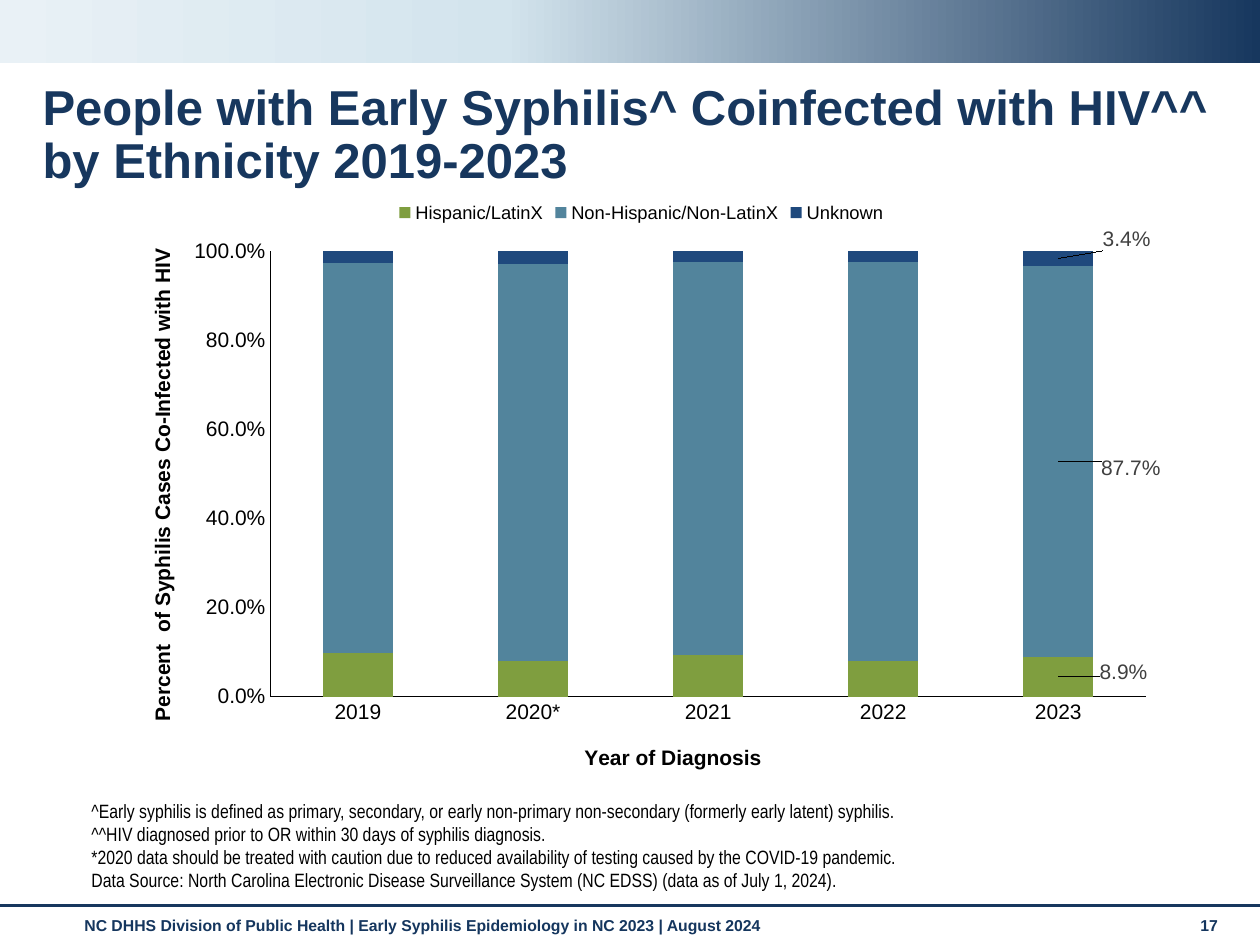
import copy

import pptx
import pptx.chart.data
import pptx.dml.color
import pptx.enum.chart
import pptx.enum.shapes
import pptx.enum.text
import pptx.oxml
import pptx.oxml.ns
import pptx.util

RGB = pptx.dml.color.RGBColor
NAVY = RGB(0x17, 0x37, 0x5E)
FOOTER_NAVY = RGB(0x15, 0x36, 0x5E)
PALE_BLUE = RGB(0xD3, 0xE4, 0xED)
ICE = RGB(0xE9, 0xF1, 0xF6)
BLACK = RGB(0, 0, 0)
LABEL_GRAY = RGB(0x40, 0x40, 0x40)
GREEN = RGB(0x7F, 0x9E, 0x3F)
TEAL = RGB(0x52, 0x84, 0x9C)
BLUE = RGB(0x1F, 0x49, 0x7D)

PX_PER_INCH = 126
WIDTH, HEIGHT = 1260, 945

YEARS = ["2019", "2020*", "2021", "2022", "2023"]
# name, values, colour, offset of the 2023 label from the middle of its bar
SERIES = [
    ("Hispanic/LatinX", [0.097, 0.08, 0.094, 0.08, 0.089], GREEN, (65, -4)),
    ("Non-Hispanic/Non-LatinX", [0.876, 0.89, 0.882, 0.895, 0.877], TEAL, (72, 7)),
    ("Unknown", [0.027, 0.03, 0.024, 0.025, 0.034], BLUE, (68, -19)),
]
FOOTNOTES = [
    "^Early syphilis is defined as primary, secondary, or early non-primary "
    "non-secondary (formerly early latent) syphilis.",
    "^^HIV diagnosed prior to OR within 30 days of syphilis diagnosis.",
    "*2020 data should be treated with caution due to reduced availability of "
    "testing caused by the COVID-19 pandemic.",
    "Data Source: North Carolina Electronic Disease Surveillance System (NC EDSS) "
    "(data as of July 1, 2024).",
]


def px(n):
    return pptx.util.Emu(round(n * 914400 / PX_PER_INCH))


def set_font(font, size, color, bold=False, name="Arial"):
    font.size = pptx.util.Pt(size)
    font.color.rgb = color
    font.bold = bold
    font.name = name


def add_text(slide, box, lines, size, color, bold=False, name="Arial"):
    tf = slide.shapes.add_textbox(*map(px, box)).text_frame
    tf.word_wrap = True
    for i, line in enumerate(lines):
        p = tf.paragraphs[0] if i == 0 else tf.add_paragraph()
        r = p.add_run()
        r.text = line
        set_font(r.font, size, color, bold, name)
    return tf


def add_banner(slide, box):
    sp = slide.shapes.add_shape(pptx.enum.shapes.MSO_SHAPE.RECTANGLE, *map(px, box))
    sp.shadow.inherit = False
    sp.line.fill.background()
    sp.fill.gradient()
    sp.fill.gradient_angle = 180
    stops = sp._element.spPr.find(".//" + pptx.oxml.ns.qn("a:gsLst"))
    stops.append(copy.deepcopy(stops[-1]))
    colors = [(0, NAVY), (0.6, PALE_BLUE), (1, ICE)]
    for stop, (position, color) in zip(sp.fill.gradient_stops, colors):
        stop.position = position
        stop.color.rgb = color


def add_title(slide, box, text):
    sp = slide.shapes.title
    sp.left, sp.top, sp.width, sp.height = map(px, box)
    tf = sp.text_frame
    tf.word_wrap = True
    tf.auto_size = pptx.enum.text.MSO_AUTO_SIZE.NONE
    tf.vertical_anchor = pptx.enum.text.MSO_ANCHOR.TOP
    p = tf.paragraphs[0]
    p.alignment = pptx.enum.text.PP_ALIGN.LEFT
    p.line_spacing = 0.9
    r = p.add_run()
    r.text = text
    set_font(r.font, 28, NAVY, True)


def set_layout(parent, index, modes="", **fractions):
    """Place a chart part by fractions of the chart's size."""
    for old in parent.findall(pptx.oxml.ns.qn("c:layout")):
        parent.remove(old)
    values = "".join(f'<c:{k} val="{v:.3f}"/>' for k, v in fractions.items())
    parent.insert(index, pptx.oxml.parse_xml(
        f'<c:layout {pptx.oxml.ns.nsdecls("c")}><c:manualLayout>'
        f"{modes}{values}</c:manualLayout></c:layout>"))


def format_axis(axis, title, x, y):
    axis.has_major_gridlines = False
    axis.major_tick_mark = pptx.enum.chart.XL_TICK_MARK.NONE
    axis.minor_tick_mark = pptx.enum.chart.XL_TICK_MARK.NONE
    set_font(axis.tick_labels.font, 12, BLACK)
    axis.format.line.color.rgb = BLACK
    axis.format.line.width = pptx.util.Pt(0.75)
    r = axis.axis_title.text_frame.paragraphs[0].add_run()
    r.text = title
    set_font(r.font, 12, BLACK, True)
    edges = '<c:xMode val="edge"/><c:yMode val="edge"/>'
    set_layout(axis.axis_title._element, 1, edges, x=x, y=y)


def add_ethnicity_chart(slide, box):
    width, height = box[2:]
    data = pptx.chart.data.CategoryChartData(number_format="0.0%")
    data.categories = YEARS
    for name, values, _, _ in SERIES:
        data.add_series(name, values)
    chart = slide.shapes.add_chart(
        pptx.enum.chart.XL_CHART_TYPE.COLUMN_STACKED, *map(px, box), data).chart
    set_font(chart.font, 10, BLACK)
    chart.has_title = False
    chart.has_legend = True
    chart.legend.position = pptx.enum.chart.XL_LEGEND_POSITION.TOP
    chart.legend.include_in_layout = False
    set_font(chart.legend.font, 10.5, BLACK)

    format_axis(chart.category_axis, "Year of Diagnosis", 465 / width, 553 / height)
    format_axis(chart.value_axis, "Percent  of Syphilis Cases Co-Infected with HIV",
                29 / width, 57 / height)
    chart.value_axis.minimum_scale = 0
    chart.value_axis.maximum_scale = 1
    chart.value_axis.major_unit = 0.2
    chart.value_axis.tick_labels.number_format = "0.0%"
    chart.value_axis.tick_labels.number_format_is_linked = False

    plot = chart.plots[0]
    plot.gap_width = 150
    plot.overlap = 100
    for series, (_, _, color, (dx, dy)) in zip(plot.series, SERIES):
        series.format.fill.solid()
        series.format.fill.fore_color.rgb = color
        label = series.points[len(YEARS) - 1].data_label
        set_font(label.font, 12, LABEL_GRAY)
        label.position = pptx.enum.chart.XL_LABEL_POSITION.CENTER
        d_lbl = series._element.find(".//" + pptx.oxml.ns.qn("c:dLbl"))
        set_layout(d_lbl, 1, x=dx / width, y=dy / height)

    plot_area = chart._chartSpace.find(".//" + pptx.oxml.ns.qn("c:plotArea"))
    inner = ('<c:layoutTarget val="inner"/>'
             '<c:xMode val="edge"/><c:yMode val="edge"/>')
    set_layout(plot_area, 0, inner, x=154 / width, y=63 / height,
               w=876 / width, h=446 / height)


def add_footnotes(slide, box):
    tf = add_text(slide, box, FOOTNOTES, 11, BLACK, name="Arial Narrow")
    tf.vertical_anchor = pptx.enum.text.MSO_ANCHOR.BOTTOM


def add_footer(slide, box):
    left, top, width, _ = box
    line = slide.shapes.add_connector(
        pptx.enum.shapes.MSO_CONNECTOR.STRAIGHT,
        px(left), px(top), px(left + width), px(top))
    line.line.color.rgb = NAVY
    line.line.width = pptx.util.Pt(1.75)
    line._element.spPr.append(pptx.oxml.parse_xml(
        f'<a:effectLst {pptx.oxml.ns.nsdecls("a")}/>'))
    source = ("NC DHHS Division of Public Health | "
              "Early Syphilis Epidemiology in NC 2023 | August 2024")
    for x, w, text in [(72, 1101, source), (1188, 56, "17")]:
        add_text(slide, (left + x, top + 4, w, 37), [text], 9, FOOTER_NAVY, True)


def main():
    prs = pptx.Presentation()
    prs.slide_width, prs.slide_height = px(WIDTH), px(HEIGHT)
    slide = prs.slides.add_slide(prs.slide_layouts[5])
    add_banner(slide, (0, 0, WIDTH, 63))
    add_footer(slide, (0, 906, WIDTH, 39))
    add_title(slide, (30, 77, 1222, 76),
              "People with Early Syphilis^ Coinfected with HIV^^ by Ethnicity 2019-2023")
    add_footnotes(slide, (79, 819, 1101, 79))
    add_ethnicity_chart(slide, (116, 188, 1051, 605))
    prs.save("out.pptx")


if __name__ == "__main__":
    main()
